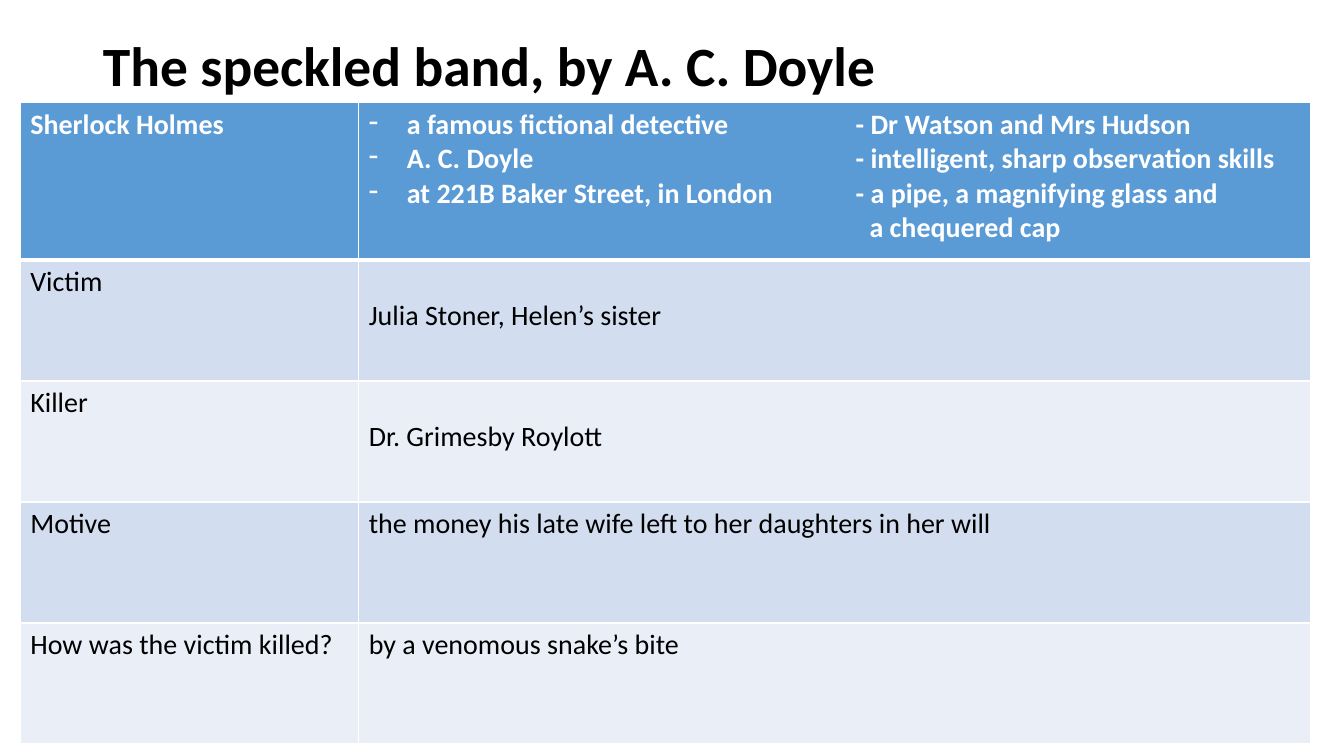
from lxml import etree
from pptx import Presentation
from pptx.dml.color import RGBColor
from pptx.enum.text import MSO_ANCHOR, PP_ALIGN
from pptx.oxml.ns import qn
from pptx.util import Cm, Pt

MIDDLE = MSO_ANCHOR.MIDDLE
LEFT = PP_ALIGN.LEFT

FONT = "Calibri"
COLORS = {
    "header": "5B9BD5",
    "odd": "D2DEEF",
    "even": "EAEFF7",
    "white": "FFFFFF",
    "black": "000000",
}
TITLE_BOX = {"left": Cm(2.34), "top": Cm(0.84), "width": Cm(29.21), "height": Cm(1.75)}
COL_WIDTHS = [Cm(8.53), Cm(24)]
HEADER_HEIGHT, ROW_HEIGHT = Cm(3.96), Cm(3.05)
BULLET_INDENT = Cm(0.96)
SECOND_COLUMN = Cm(12.27)
SECOND_COLUMN_TEXT = Cm(12.62)
CELL_TOP, LOWERED_TOP = Cm(0.13), Cm(0.99)

HOLMES_FACTS = [
    ("a famous fictional detective", "Dr Watson and Mrs Hudson"),
    ("A. C. Doyle", "intelligent, sharp observation skills"),
    ("at 221B Baker Street, in London", "a pipe, a magnifying glass and"),
]
HOLMES_LAST_LINE = "a chequered cap"
CASE = [
    ("Victim", "Julia Stoner, Helen’s sister", LOWERED_TOP),
    ("Killer", "Dr. Grimesby Roylott", LOWERED_TOP),
    ("Motive", "the money his late wife left to her daughters in her will", CELL_TOP),
    ("How was the victim killed?", "by a venomous snake’s bite", CELL_TOP),
]


def add_run(p, text, color, **formats):
    r = p.add_run()
    r.text = text
    for name, value in {"name": FONT, "size": Pt(20), "bold": False, **formats}.items():
        setattr(r.font, name, value)
    r.font.color.rgb = RGBColor.from_string(COLORS[color])


def add_title(slide, text):
    sp = slide.shapes.title
    for name, value in TITLE_BOX.items():
        setattr(sp, name, value)
    tf = sp.text_frame
    tf.vertical_anchor = MIDDLE
    p = tf.paragraphs[0]
    p.alignment = LEFT
    p.line_spacing = 0.9
    add_run(p, text, "black", size=Pt(39.6), bold=True)


def set_borders(cell, bottom):
    """Draw white cell edges, 1 pt wide except for the given bottom and top."""
    tcPr = cell._tc.get_or_add_tcPr()
    for side, width in {"L": 1, "R": 1, "T": 1, "B": bottom}.items():
        ln = etree.SubElement(tcPr, qn(f"a:ln{side}"), w=str(Pt(width)))
        fill = etree.SubElement(ln, qn("a:solidFill"))
        etree.SubElement(fill, qn("a:srgbClr"), val=COLORS["white"])


def style_cell(cell, fill, bottom=1):
    set_borders(cell, bottom)
    cell.fill.solid()
    cell.fill.fore_color.rgb = RGBColor.from_string(COLORS[fill])


def set_dash_and_tab(p):
    """Give a hanging dash bullet and a tab stop for the second column."""
    pPr = p._p.get_or_add_pPr()
    pPr.set("marL", str(BULLET_INDENT))
    pPr.set("indent", str(-BULLET_INDENT))
    etree.SubElement(pPr, qn("a:buFontTx"))
    etree.SubElement(pPr, qn("a:buChar"), char="-")
    tabs = etree.SubElement(pPr, qn("a:tabLst"))
    etree.SubElement(tabs, qn("a:tab"), pos=str(SECOND_COLUMN), algn="l")


def fill_header(table):
    name, facts = table.cell(0, 0), table.cell(0, 1)
    add_run(name.text_frame.paragraphs[0], "Sherlock Holmes", "white", bold=True)
    tf = facts.text_frame
    for i, (first, second) in enumerate(HOLMES_FACTS):
        p = tf.add_paragraph() if i else tf.paragraphs[0]
        set_dash_and_tab(p)
        add_run(p, f"{first}\t- {second}", "white", bold=True)
    p = tf.add_paragraph()
    p._p.get_or_add_pPr().set("marL", str(SECOND_COLUMN_TEXT))
    add_run(p, HOLMES_LAST_LINE, "white", bold=True)
    for cell in (name, facts):
        style_cell(cell, "header", bottom=3)


def fill_case_row(table, row, label, answer, answer_top):
    for col, (text, top) in enumerate([(label, CELL_TOP), (answer, answer_top)]):
        cell = table.cell(row, col)
        cell.margin_top = top
        add_run(cell.text_frame.paragraphs[0], text, "black")
        style_cell(cell, "odd" if row % 2 else "even")


def add_case_table(slide):
    heights = [HEADER_HEIGHT] + [ROW_HEIGHT] * len(CASE)
    table = slide.shapes.add_table(len(heights), len(COL_WIDTHS), Cm(0.51), Cm(2.59),
                                   sum(COL_WIDTHS), sum(heights)).table
    for column, width in zip(table.columns, COL_WIDTHS):
        column.width = width
    for row, height in zip(table.rows, heights):
        row.height = height
    fill_header(table)
    for i, entry in enumerate(CASE, start=1):
        fill_case_row(table, i, *entry)


def main():
    prs = Presentation()
    prs.slide_width, prs.slide_height = Cm(33.87), Cm(19.05)
    slide = prs.slides.add_slide(prs.slide_layouts[5])
    add_title(slide, "The speckled band, by A. C. Doyle")
    add_case_table(slide)
    prs.save("out.pptx")


if __name__ == "__main__":
    main()
